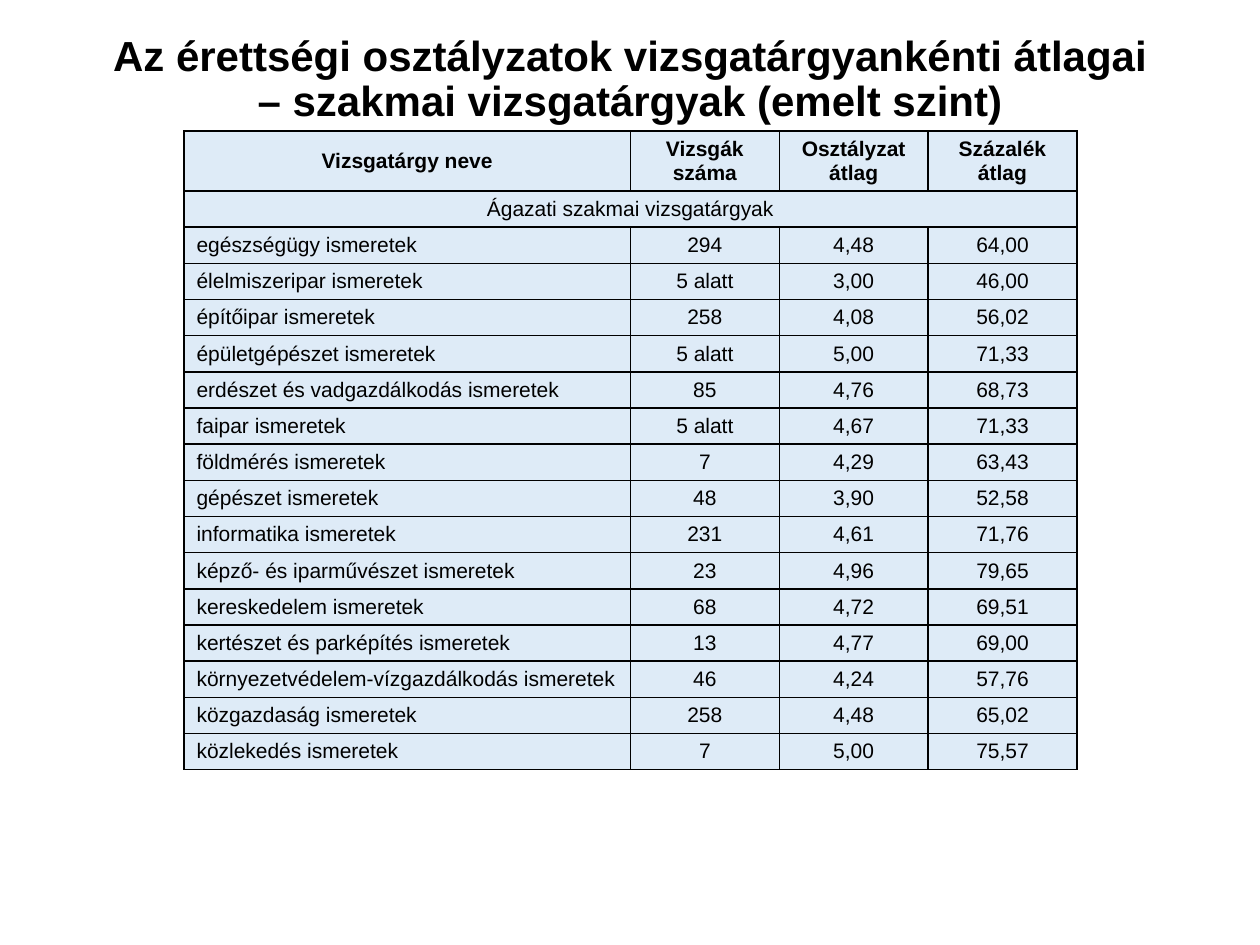
from lxml.etree import SubElement
from pptx import Presentation
from pptx.dml.color import RGBColor
from pptx.enum.text import MSO_ANCHOR, MSO_AUTO_SIZE, PP_ALIGN
from pptx.oxml.ns import qn
from pptx.util import Emu, Pt

BLACK = RGBColor(0x00, 0x00, 0x00)
PALE_BLUE = RGBColor(0xDE, 0xEB, 0xF7)
FONT = "Arial"
PX_PER_INCH = 126

TITLE = ("Az érettségi osztályzatok vizsgatárgyankénti átlagai "
         "– szakmai vizsgatárgyak (emelt szint)")
HEADER = ("Vizsgatárgy neve", "Vizsgák száma", "Osztályzat átlag", "Százalék átlag")
GROUP = "Ágazati szakmai vizsgatárgyak"
SUBJECTS = [
    ("egészségügy ismeretek", "294", "4,48", "64,00"),
    ("élelmiszeripar ismeretek", "5 alatt", "3,00", "46,00"),
    ("építőipar ismeretek", "258", "4,08", "56,02"),
    ("épületgépészet ismeretek", "5 alatt", "5,00", "71,33"),
    ("erdészet és vadgazdálkodás ismeretek", "85", "4,76", "68,73"),
    ("faipar ismeretek", "5 alatt", "4,67", "71,33"),
    ("földmérés ismeretek", "7", "4,29", "63,43"),
    ("gépészet ismeretek", "48", "3,90", "52,58"),
    ("informatika ismeretek", "231", "4,61", "71,76"),
    ("képző- és iparművészet ismeretek", "23", "4,96", "79,65"),
    ("kereskedelem ismeretek", "68", "4,72", "69,51"),
    ("kertészet és parképítés ismeretek", "13", "4,77", "69,00"),
    ("környezetvédelem-vízgazdálkodás ismeretek", "46", "4,24", "57,76"),
    ("közgazdaság ismeretek", "258", "4,48", "65,02"),
    ("közlekedés ismeretek", "7", "5,00", "75,57"),
]


def px(n):
    return Emu(round(n * 914400 / PX_PER_INCH))


def add_text(p, text, size, bold, align):
    p.alignment = align
    r = p.add_run()
    r.text = text
    r.font.name = FONT
    r.font.size = Pt(size)
    r.font.bold = bold
    r.font.color.rgb = BLACK


def set_borders(cell):
    tc_pr = cell._tc.get_or_add_tcPr()
    for i, side in enumerate(("a:lnL", "a:lnR", "a:lnT", "a:lnB")):
        ln = SubElement(tc_pr, qn(side), w=str(Pt(1)))
        fill = SubElement(ln, qn("a:solidFill"))
        SubElement(fill, qn("a:srgbClr"), val=str(BLACK))
        tc_pr.remove(ln)
        tc_pr.insert(i, ln)


def add_title(s, x, y, w, h):
    sp = s.shapes.title
    sp.left, sp.top, sp.width, sp.height = px(x), px(y), px(w), px(h)
    tf = sp.text_frame
    tf.word_wrap = True
    tf.auto_size = MSO_AUTO_SIZE.NONE
    tf.vertical_anchor = MSO_ANCHOR.MIDDLE
    p = tf.paragraphs[0]
    p.line_spacing = 0.9
    add_text(p, TITLE, 24, True, PP_ALIGN.CENTER)


def add_results_table(s, x, y, w, h):
    rows = [HEADER, (GROUP, "", "", ""), *SUBJECTS]
    header_h = 60
    row_h = (h - header_h) / (len(rows) - 1)
    tbl = s.shapes.add_table(len(rows), len(HEADER), px(x), px(y), px(w), px(h)).table
    for col, share in zip(tbl.columns, (3, 1, 1, 1)):
        col.width = px(w * share / 6)
    for i, values in enumerate(rows):
        tbl.rows[i].height = px(row_h if i else header_h)
        for j, value in enumerate(values):
            cell = tbl.cell(i, j)
            cell.vertical_anchor = MSO_ANCHOR.MIDDLE
            cell.fill.solid()
            cell.fill.fore_color.rgb = PALE_BLUE
            set_borders(cell)
            if value:
                align = PP_ALIGN.LEFT if i > 1 and j == 0 else PP_ALIGN.CENTER
                add_text(cell.text_frame.paragraphs[0], value, 12, i == 0, align)
    tbl.cell(1, 0).merge(tbl.cell(1, len(HEADER) - 1))


def main():
    prs = Presentation()
    prs.slide_width, prs.slide_height = px(1260), px(945)
    s = prs.slides.add_slide(prs.slide_layouts[5])
    add_title(s, 87, -11, 1086, 183)
    add_results_table(s, 184, 131, 893, 638)
    prs.save("out.pptx")


if __name__ == "__main__":
    main()
